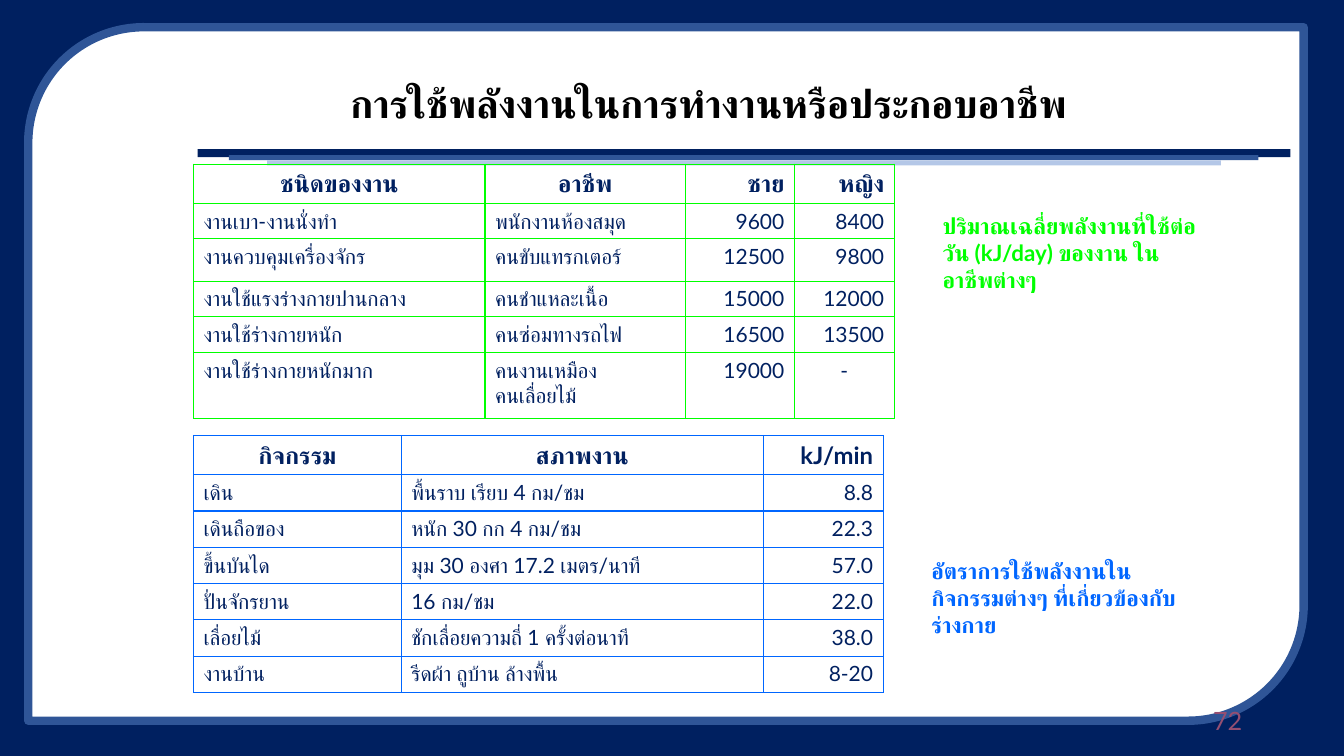
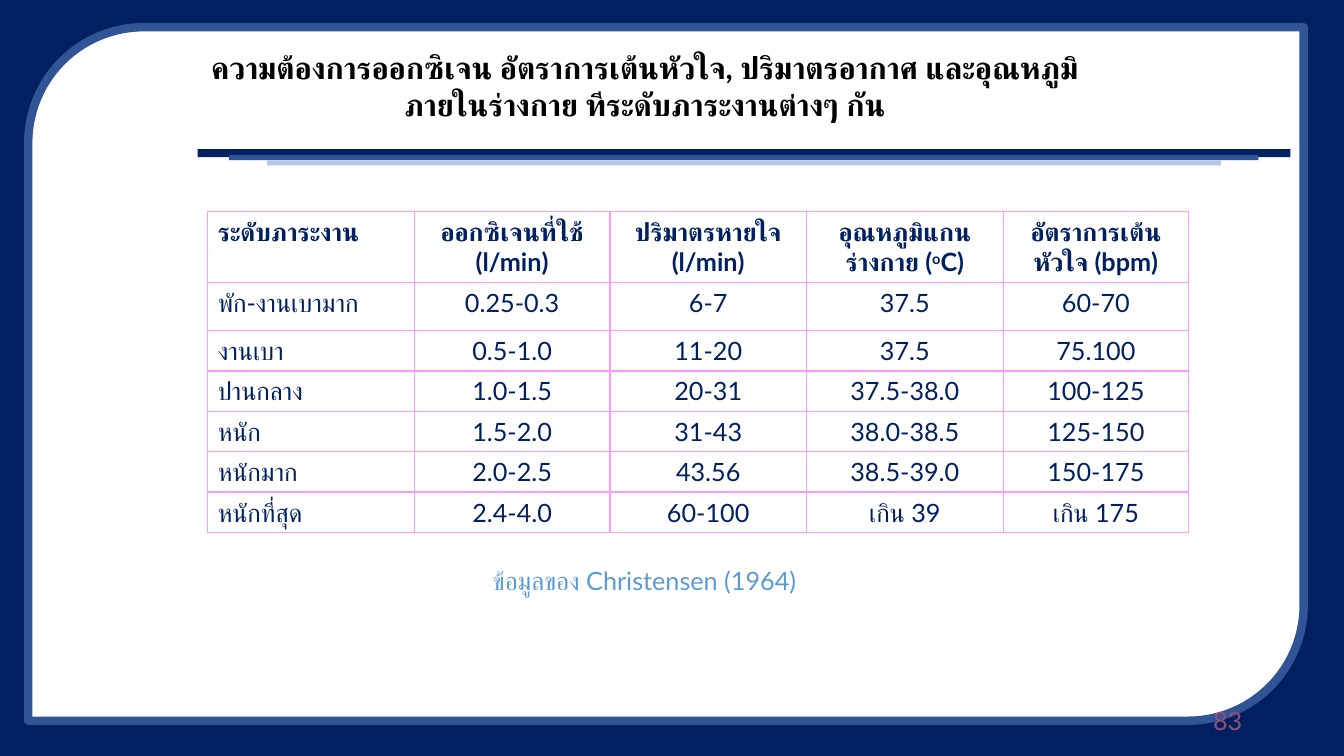
from lxml import etree
from pptx import Presentation
from pptx.dml.color import RGBColor
from pptx.enum.shapes import MSO_SHAPE as SHAPE
from pptx.enum.text import MSO_ANCHOR as ANCHOR, MSO_AUTO_SIZE as AUTO, PP_ALIGN as ALIGN
from pptx.oxml.ns import qn
from pptx.util import Inches, Pt

NAVY, BLUE, PALE, WHITE, BLACK = "002060", "2F5597", "B4C7E7", "FFFFFF", "000000"
GREEN, AZURE, PINK, SKY, PLUM = "00FF00", "0066FF", "FF99FF", "5B9BD5", "954F72"
FONT = "Lato"
ALIGNS = {"l": ALIGN.LEFT, "c": ALIGN.CENTER, "r": ALIGN.RIGHT}


def rgb(color):
    return RGBColor.from_string(color)


def box(left, top, width, height):
    return Inches(left), Inches(top), Inches(width), Inches(height)


def add_border(cell, color):
    tcPr = cell._tc.get_or_add_tcPr()
    for side in ("lnL", "lnR", "lnT", "lnB"):
        ln = etree.SubElement(tcPr, qn(f"a:{side}"), w=str(Pt(1)))
        fill = etree.SubElement(ln, qn("a:solidFill"))
        etree.SubElement(fill, qn("a:srgbClr"), val=color)


def add_superscript(p, text):
    r = p.add_run()
    r.text = text
    r._r.get_or_add_rPr().set("baseline", "30000")


class Deck:
    def __init__(self):
        self.prs = Presentation()
        self.prs.slide_width, self.prs.slide_height = Inches(13.33), Inches(7.5)
        self.layout = self.prs.slide_layouts[5]
        self.s = None

    def add_slide(self, title, at, size, number):
        self.s = self.prs.slides.add_slide(self.layout)
        if len(self.prs.slides) == 1:
            self.decorate_layout()
        sp = self.s.shapes.title
        sp.left, sp.top, sp.width, sp.height = box(*at)
        self.set_text(sp.text_frame, title, size, BLACK, bold=True, align="c")
        self.add_text(str(number), (9.42, 6.95, 3, 0.4), 18, PLUM, align="r", anchor=ANCHOR.MIDDLE)

    def decorate_layout(self):
        """Draw the frame and title rule on the first slide, then move them to the layout."""
        fill = self.layout.background.fill
        fill.solid()
        fill.fore_color.rgb = rgb(NAVY)
        tree = self.layout.shapes.element
        for ph in list(self.layout.placeholders)[1:]:
            tree.remove(ph.element)
        decor = [
            self.add_shape(SHAPE.ROUND_2_DIAG_RECTANGLE, (0.28, 0.27, 12.65, 6.88), WHITE, BLUE),
            self.add_shape(SHAPE.RECTANGLE, (1.96, 1.48, 10.84, 0.08), NAVY),
            self.add_shape(SHAPE.RECTANGLE, (2.27, 1.54, 10.21, 0.05), BLUE),
            self.add_shape(SHAPE.RECTANGLE, (2.65, 1.59, 9.46, 0.05), PALE),
        ]
        for i, sp in enumerate(decor):
            tree.insert(2 + i, sp.element)

    def add_shape(self, kind, at, color, line=None):
        sp = self.s.shapes.add_shape(kind, *box(*at))
        sp.shadow.inherit = False
        sp.fill.solid()
        sp.fill.fore_color.rgb = rgb(color)
        if line:
            sp.line.color.rgb = rgb(line)
            sp.line.width = Pt(6)
        else:
            sp.line.fill.background()
        return sp

    def set_text(self, tf, text, size, color, bold=False, align="l", anchor=ANCHOR.TOP, wrap=True):
        tf.text = text
        tf.word_wrap = wrap
        tf.auto_size = AUTO.NONE
        tf.vertical_anchor = anchor
        for p in tf.paragraphs:
            self.style(p, size, color, bold, align)

    def style(self, p, size, color, bold, align):
        p.alignment = ALIGNS[align]
        f = p.font
        f.name, f.size, f.bold = FONT, Pt(size), bold
        f.color.rgb = rgb(color)
        defaults = p._p.pPr.find(qn("a:defRPr"))
        etree.SubElement(defaults, qn("a:cs"), typeface=FONT)

    def add_text(self, text, at, size, color, **look):
        sp = self.s.shapes.add_textbox(*box(*at))
        self.set_text(sp.text_frame, text, size, color, **look)

    def add_table(self, rows, at, widths, heights, color, aligns, sizes, fill=None):
        """aligns and sizes each hold one value for the header and one for the body."""
        left, top = at
        frame = self.s.shapes.add_table(
            len(rows), len(widths), *box(left, top, sum(widths), sum(heights)))
        table = frame.table
        table.first_row = table.horz_banding = False
        for col, width in zip(table.columns, widths):
            col.width = Inches(width)
        for i, (row, height) in enumerate(zip(rows, heights)):
            table.rows[i].height = Inches(height)
            part = min(i, 1)
            for j, (text, align) in enumerate(zip(row, aligns[part])):
                cell = table.cell(i, j)
                cell.text_frame.text = text
                for p in cell.text_frame.paragraphs:
                    self.style(p, sizes[part], NAVY, i == 0, align)
                add_border(cell, color)
                if fill:
                    cell.fill.solid()
                    cell.fill.fore_color.rgb = rgb(fill)
                else:
                    cell.fill.background()
        return table


JOBS = [
    ("ชนิดของงาน", "อาชีพ", "ชาย", "หญิง"),
    ("งานเบา-งานนั่งทำ", "พนักงานห้องสมุด", "9600", "8400"),
    ("งานควบคุมเครื่องจักร", "คนขับแทรกเตอร์", "12500", "9800"),
    ("งานใช้แรงร่างกายปานกลาง", "คนชำแหละเนื้อ", "15000", "12000"),
    ("งานใช้ร่างกายหนัก", "คนซ่อมทางรถไฟ", "16500", "13500"),
    ("งานใช้ร่างกายหนักมาก", "คนงานเหมือง\nคนเลื่อยไม้", "19000", "-"),
]
ACTIVITIES = [
    ("กิจกรรม", "สภาพงาน", "kJ/min"),
    ("เดิน", "พื้นราบ เรียบ 4 กม/ชม", "8.8"),
    ("เดินถือของ", "หนัก 30 กก 4 กม/ชม", "22.3"),
    ("ขึ้นบันได", "มุม 30 องศา 17.2 เมตร/นาที", "57.0"),
    ("ปั่นจักรยาน", "16 กม/ชม", "22.0"),
    ("เลื่อยไม้", "ชักเลื่อยความถี่ 1 ครั้งต่อนาที", "38.0"),
    ("งานบ้าน", "รีดผ้า ถูบ้าน ล้างพื้น", "8-20"),
]
WORKLOADS = [
    ("ระดับภาระงาน", "ออกซิเจนที่ใช้\v(l/min)", "ปริมาตรหายใจ\v(l/min)",
     "อุณหภูมิแกนร่างกาย (", "อัตราการเต้นหัวใจ (bpm)"),
    ("พัก-งานเบามาก", "0.25-0.3", "6-7", "37.5", "60-70"),
    ("งานเบา", "0.5-1.0", "11-20", "37.5", "75.100"),
    ("ปานกลาง", "1.0-1.5", "20-31", "37.5-38.0", "100-125"),
    ("หนัก", "1.5-2.0", "31-43", "38.0-38.5", "125-150"),
    ("หนักมาก", "2.0-2.5", "43.56", "38.5-39.0", "150-175"),
    ("หนักที่สุด", "2.4-4.0", "60-100", "เกิน 39", "เกิน 175"),
]


def add_energy_slide(deck):
    deck.add_slide("การใช้พลังงานในการทำงานหรือประกอบอาชีพ", (2.27, 0.74, 9.51, 0.57), 28, 72)
    deck.add_text("อัตราการใช้พลังงานในกิจกรรมต่างๆ ที่เกี่ยวข้องกับร่างกาย",
                  (9.14, 5.48, 2.73, 0.91), 16, AZURE, bold=True)
    deck.add_text("ปริมาณเฉลี่ยพลังงานที่ใช้ต่อวัน (kJ/day) ของงาน ในอาชีพต่างๆ",
                  (9.25, 2.06, 2.82, 0.91), 16, GREEN, bold=True)
    jobs = deck.add_table(JOBS, (1.92, 1.63), (2.89, 1.99, 1.08, 0.99),
                          (0.39, 0.35, 0.42, 0.35, 0.36, 0.65),
                          GREEN, ("ccrr", "llrr"), (17, 15))
    jobs.cell(5, 3).text_frame.paragraphs[0].alignment = ALIGN.CENTER
    deck.add_table(ACTIVITIES, (1.92, 4.32), (2.06, 3.59, 1.19), [0.39] + [0.36] * 6,
                   AZURE, ("ccr", "llr"), (17, 15), fill=WHITE)


def add_workload_slide(deck):
    deck.add_slide("ความต้องการออกซิเจน อัตราการเต้นหัวใจ, ปริมาตรอากาศ "
                   "และอุณหภูมิภายในร่างกาย ทีระดับภาระงานต่างๆ กัน",
                   (1.87, 0.43, 9.05, 0.83), 22, 83)
    loads = deck.add_table(WORKLOADS, (2.06, 2.1), (2.05, 1.94, 1.95, 1.95, 1.84),
                           [0.7, 0.48] + [0.4] * 5, PINK, ("lcccc", "lcccc"), (18, 18))
    p = loads.cell(0, 3).text_frame.paragraphs[0]
    add_superscript(p, "o")
    p.add_run().text = "C)"
    deck.add_text("ข้อมูลของ Christensen (1964)", (4.79, 5.56, 3.44, 0.4), 18, SKY, wrap=False)


def main():
    deck = Deck()
    add_energy_slide(deck)
    add_workload_slide(deck)
    deck.prs.save("out.pptx")


if __name__ == "__main__":
    main()
